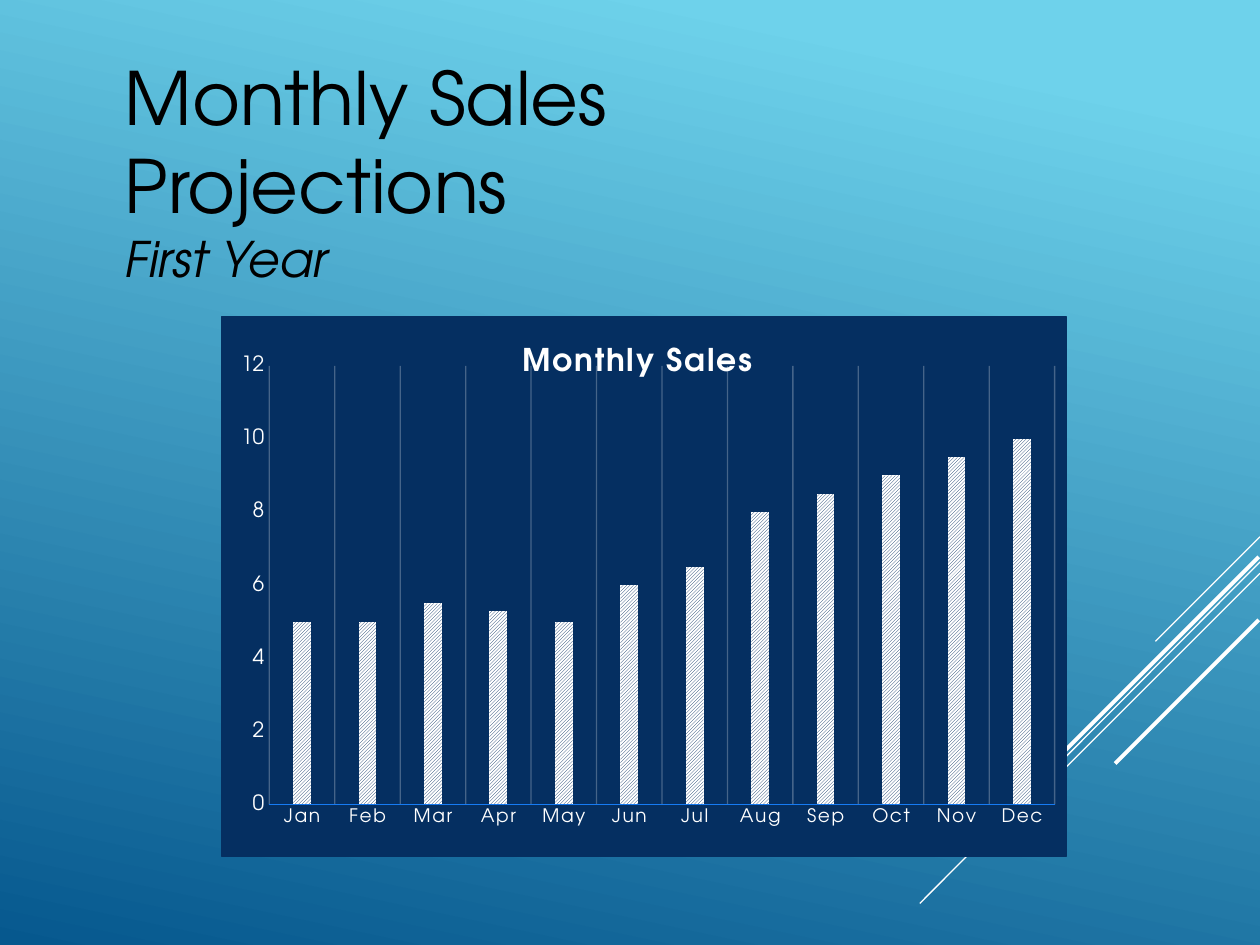
from lxml import etree
from pptx import Presentation
from pptx.chart.data import CategoryChartData
from pptx.dml.color import RGBColor
from pptx.enum.chart import XL_CHART_TYPE, XL_TICK_MARK
from pptx.enum.dml import MSO_PATTERN
from pptx.enum.shapes import MSO_CONNECTOR
from pptx.enum.text import MSO_ANCHOR
from pptx.oxml import parse_xml
from pptx.oxml.ns import nsdecls, qn
from pptx.util import Inches, Pt

COLUMN = XL_CHART_TYPE.COLUMN_CLUSTERED
NO_TICK = XL_TICK_MARK.NONE
HATCH = MSO_PATTERN.LIGHT_UPWARD_DIAGONAL
STRAIGHT = MSO_CONNECTOR.STRAIGHT

FONT = "TeX Gyre Adventor"
WHITE = RGBColor(0xFF, 0xFF, 0xFF)
BLACK = RGBColor(0, 0, 0)
NAVY = RGBColor(0x05, 0x2F, 0x61)
BLUE = RGBColor(0x16, 0x7B, 0xF3)
SKY = RGBColor(0x6E, 0xD2, 0xEB)
DEEP = RGBColor(0x06, 0x58, 0x8E)

# right end x, y, horizontal run, vertical drop, weight
RAYS = [
    (10, 4.26, 0.83, 0.83, 0.75),
    (10, 4.46, 2.7, 2.71, 0.75),
    (10, 4.55, 1.72, 1.72, 0.75),
    (9.99, 4.42, 1.57, 1.57, 2.25),
    (9.99, 4.92, 1.14, 1.14, 2.25),
]
HEADING = ("Monthly Sales Projections", 42)
SUBHEAD = ("First Year", 28)
SALES = {
    "Jan": 5, "Feb": 5, "Mar": 5.5, "Apr": 5.3, "May": 5, "Jun": 6,
    "Jul": 6.5, "Aug": 8, "Sep": 8.5, "Oct": 9, "Nov": 9.5, "Dec": 10,
}


def style(font, size, color):
    font.name, font.size = FONT, Pt(size)
    font.color.rgb = color


def layout(x, y, w=None, h=None):
    """Return a manual chart layout, in fractions of the chart."""
    node = parse_xml(f"<c:layout {nsdecls('c')}><c:manualLayout/></c:layout>")
    parts = [("xMode", "edge"), ("yMode", "edge"), ("x", x), ("y", y)]
    if w is not None:
        parts = [("layoutTarget", "inner")] + parts + [("w", w), ("h", h)]
    for name, val in parts:
        etree.SubElement(node[0], qn("c:" + name)).set("val", str(val))
    return node


def drop_layout(node):
    for old in node.findall(qn("c:layout")):
        node.remove(old)


def paint_back(slide):
    fill = slide.background.fill
    fill.gradient()
    fill.gradient_angle = 258
    for stop, (pos, color) in zip(fill.gradient_stops, [(0.1, SKY), (1, DEEP)]):
        stop.position = pos
        stop.color.rgb = color


def add_rays(slide):
    for x, y, run, drop, weight in RAYS:
        ray = slide.shapes.add_connector(
            STRAIGHT, *map(Inches, (x, y, x - run, y + drop)))
        ray.line.color.rgb = WHITE
        ray.line.width = Pt(weight)
        etree.SubElement(ray._element.spPr, qn("a:effectLst"))


def add_title(slide):
    box = slide.shapes.add_textbox(*map(Inches, (0.89, 0.32, 7.17, 2.05)))
    frame = box.text_frame
    frame.word_wrap = True
    frame.vertical_anchor = MSO_ANCHOR.MIDDLE
    para = frame.paragraphs[0]
    for i, (text, size) in enumerate((HEADING, SUBHEAD)):
        if i:
            para.add_line_break()
        run = para.add_run()
        run.text = text
        style(run.font, size, BLACK)
        run.font.italic = i == 1


def add_sales(slide):
    data = CategoryChartData()
    data.categories = list(SALES)
    data.add_series("Series 1", list(SALES.values()))
    chart = slide.shapes.add_chart(
        COLUMN, *map(Inches, (1.75, 2.51, 6.72, 4.29)), data).chart
    chart.has_legend = False
    style(chart.font, 10, WHITE)
    paint = f'<a:solidFill><a:srgbClr val="{NAVY}"/></a:solidFill>'
    chart.element.find(qn("c:chart")).addnext(parse_xml(
        f'<c:spPr {nsdecls("c", "a")}>{paint}<a:ln w="9525">{paint}</a:ln></c:spPr>'))

    title = chart.chart_title
    run = title.text_frame.paragraphs[0].add_run()
    run.text = "Monthly Sales"
    style(run.font, 18, WHITE)
    run.font.bold = True
    run.font._element.set("spc", "100")
    drop_layout(title.element)
    title.element.find(qn("c:tx")).addnext(layout(0.35, 0.04))
    title.element.find(qn("c:overlay")).set("val", "1")

    area = chart.element.find(".//" + qn("c:plotArea"))
    drop_layout(area)
    area.insert(0, layout(0.057, 0.091, 0.929, 0.813))

    plot = chart.plots[0]
    plot.gap_width, plot.overlap = 269, -20
    plot.vary_by_categories = False
    fill = plot.series[0].format.fill
    fill.patterned()
    fill.pattern = HATCH
    fill.fore_color.rgb, fill.back_color.rgb = NAVY, WHITE

    months, values = chart.category_axis, chart.value_axis
    for axis, size in ((months, 10.6), (values, 12)):
        axis.major_tick_mark = axis.minor_tick_mark = NO_TICK
        style(axis.tick_labels.font, size, WHITE)
    months.tick_labels.font._element.set("spc", "100")
    months.format.line.color.rgb = BLUE
    months.format.line.width = Pt(0.25)
    months.has_major_gridlines = True
    grid = months.major_gridlines.format.line
    grid.color.rgb = WHITE
    grid.width = Pt(0.75)
    shade = months._element.find(
        f"{qn('c:majorGridlines')}//{qn('a:srgbClr')}")
    etree.SubElement(shade, qn("a:alpha")).set("val", "25000")
    values.has_major_gridlines = False
    values.format.line.fill.background()
    values.minimum_scale, values.maximum_scale = 0, 12
    values.major_unit = 2


def main():
    deck = Presentation()
    deck.slide_width, deck.slide_height = Inches(10), Inches(7.5)
    slide = deck.slides.add_slide(deck.slide_layouts[6])
    paint_back(slide)
    add_rays(slide)
    add_title(slide)
    add_sales(slide)
    deck.save("out.pptx")


if __name__ == "__main__":
    main()
